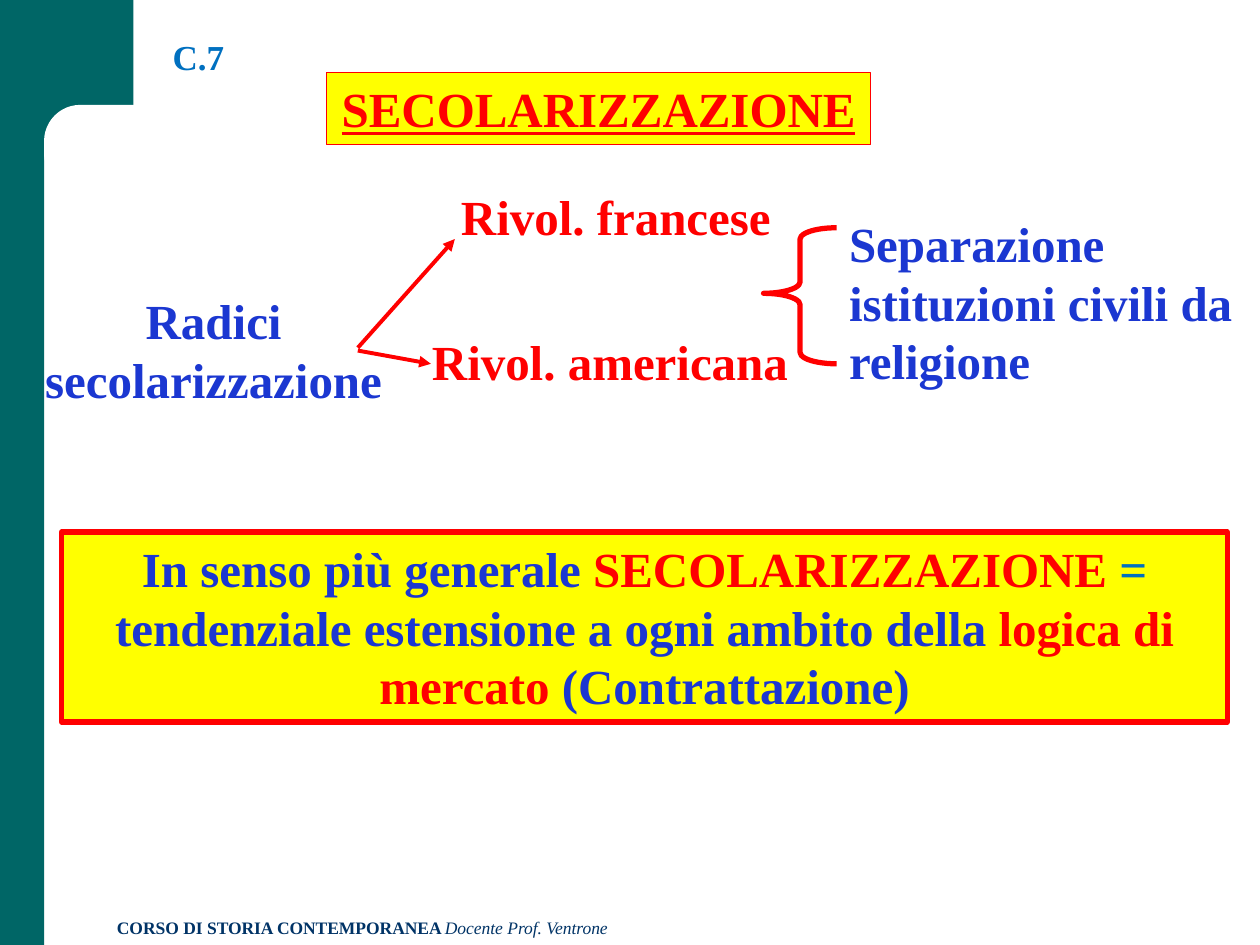
from dataclasses import dataclass

from lxml import etree
from pptx import Presentation
from pptx.dml.color import RGBColor
from pptx.enum.shapes import MSO_CONNECTOR, MSO_SHAPE
from pptx.enum.text import MSO_ANCHOR, PP_ALIGN
from pptx.oxml.ns import qn
from pptx.util import Inches, Pt

RECT, ROUNDED, BRACE = MSO_SHAPE.RECTANGLE, MSO_SHAPE.ROUNDED_RECTANGLE, MSO_SHAPE.LEFT_BRACE
STRAIGHT = MSO_CONNECTOR.STRAIGHT
LEFT, CENTER = PP_ALIGN.LEFT, PP_ALIGN.CENTER
TOP, BOTTOM = MSO_ANCHOR.TOP, MSO_ANCHOR.BOTTOM


@dataclass(frozen=True)
class Theme:
    font: str = "Times New Roman"
    green: str = "006666"
    white: str = "FFFFFF"
    yellow: str = "FFFF00"
    red: str = "FF0000"
    blue: str = "1B37D1"
    sky: str = "0070C0"
    navy: str = "003366"
    large: int = 28
    heading: int = 20
    small: int = 10
    thin: float = 0.75
    arrow: float = 2.25
    thick: float = 3


THEME = Theme()
SLIDE_W, SLIDE_H = Inches(10), Inches(7.5)

# Places are percentages of the slide: left, top, width, height.
FRAME = [
    (RECT, (0, 0, 3.5, 100), THEME.green),
    (RECT, (0, 0, 10.6, 15.6), THEME.green),
    (ROUNDED, (3.5, 11.1, 60.6, 8.9), THEME.white),
]
HEADING = ("C.7", (12.7, 0, 10, 8.9))
FOOTER = ([("CORSO DI STORIA CONTEMPORANEA ", {"bold": True}),
           ("Docente Prof. Ventrone", {"italic": True})], (8.3, 96.4, 61.7, 3.6))
TOPIC = ("SECOLARIZZAZIONE", (25.9, 7.7, 43.2, 7.6))
LABELS = [
    ("Radici secolarizzazione", (1.7, 30.1, 30.5, 13.9), THEME.blue, CENTER, True),
    ("Rivol. francese", (35.6, 19.1, 26.9, 7.6), THEME.red, LEFT, False),
    ("Rivol. americana", (33.3, 34.4, 30.6, 7.6), THEME.red, LEFT, False),
    ("Separazione istituzioni civili da religione", (66.4, 21.9, 33.7, 20.1),
     THEME.blue, LEFT, True),
]
ROOT_ARROWS = [((28.4, 36.8), (36.1, 25.3)), ((28.4, 37.1), (34.2, 38.5))]
BRACE_PLACE, BRACE_BENDS = (60.6, 24.1, 5.8, 14.4), (0.155, 0.482)
DEFINITION = ([
    ("In senso più generale ", THEME.blue),
    ("SECOLARIZZAZIONE", THEME.red),
    (" = ", THEME.sky),
    ("tendenziale estensione a ogni ambito della ", THEME.blue),
    ("logica di mercato ", THEME.red),
    ("(Contrattazione)", THEME.blue),
], (4.9, 56.3, 92.5, 20.1))


def share(*percents):
    """Turn alternating horizontal and vertical percentages into lengths."""
    return [round((SLIDE_H if i % 2 else SLIDE_W) * p / 100) for i, p in enumerate(percents)]


def write(shape, runs, size, align=LEFT, anchor=TOP, wrap=True):
    """Fill a shape with one paragraph of (text, colour, font extras) runs."""
    frame = shape.text_frame
    frame.word_wrap, frame.vertical_anchor = wrap, anchor
    paragraph = frame.paragraphs[0]
    paragraph.alignment = align
    for text, colour, extras in runs:
        run = paragraph.add_run()
        run.text = text
        look = {"name": THEME.font, "size": Pt(size), "bold": True, **extras}
        for attribute, value in look.items():
            setattr(run.font, attribute, value)
        run.font.color.rgb = RGBColor.from_string(colour)
    return paragraph


def set_line(shape, colour, width):
    shape.line.color.rgb = RGBColor.from_string(colour)
    shape.line.width = Pt(width)


def add_shape(slide, kind, place, fill=None, line_width=None):
    shape = slide.shapes.add_shape(kind, *share(*place))
    shape.shadow.inherit = False
    if fill:
        shape.fill.solid()
        shape.fill.fore_color.rgb = RGBColor.from_string(fill)
    else:
        shape.fill.background()
    if line_width:
        set_line(shape, THEME.red, line_width)
    else:
        shape.line.fill.background()
    return shape


def add_label(slide, place, runs, size, align=LEFT, wrap=True):
    write(slide.shapes.add_textbox(*share(*place)), runs, size, align, wrap=wrap)


def add_arrow(slide, start, end):
    arrow = slide.shapes.add_connector(STRAIGHT, *share(*start, *end))
    set_line(arrow, THEME.red, THEME.arrow)
    etree.SubElement(arrow.line._get_or_add_ln(), qn("a:tailEnd"), type="triangle")
    etree.SubElement(arrow._element.spPr, qn("a:effectLst"))


def main():
    deck = Presentation()
    deck.slide_width, deck.slide_height = SLIDE_W, SLIDE_H
    slide = deck.slides.add_slide(deck.slide_layouts[5])

    for kind, place, fill in FRAME:
        panel = add_shape(slide, kind, place, fill)
        if kind == ROUNDED:
            panel.adjustments[0] = 0.43

    credits, place = FOOTER
    add_label(slide, place, [(text, THEME.navy, {"bold": False, **extras})
                             for text, extras in credits], THEME.small)

    code, place = HEADING
    heading = slide.shapes.title
    heading.left, heading.top, heading.width, heading.height = share(*place)
    write(heading, [(code, THEME.sky, {})], THEME.heading, anchor=BOTTOM).line_spacing = 0.9
    # The title is drawn above the frame panels.
    slide.shapes._spTree.append(heading._element)

    topic, place = TOPIC
    write(add_shape(slide, RECT, place, THEME.yellow, THEME.thin),
          [(topic, THEME.red, {"underline": True})], THEME.large, CENTER, wrap=False)

    for text, place, colour, align, wrap in LABELS:
        add_label(slide, place, [(text, colour, {})], THEME.large, align, wrap)
    for start, end in ROOT_ARROWS:
        add_arrow(slide, start, end)

    brace = add_shape(slide, BRACE, BRACE_PLACE, line_width=THEME.thick)
    for index, bend in enumerate(BRACE_BENDS):
        brace.adjustments[index] = bend

    phrases, place = DEFINITION
    write(add_shape(slide, RECT, place, THEME.yellow, THEME.thick),
          [(text, colour, {}) for text, colour in phrases], THEME.large, CENTER)

    deck.save("out.pptx")


if __name__ == "__main__":
    main()
